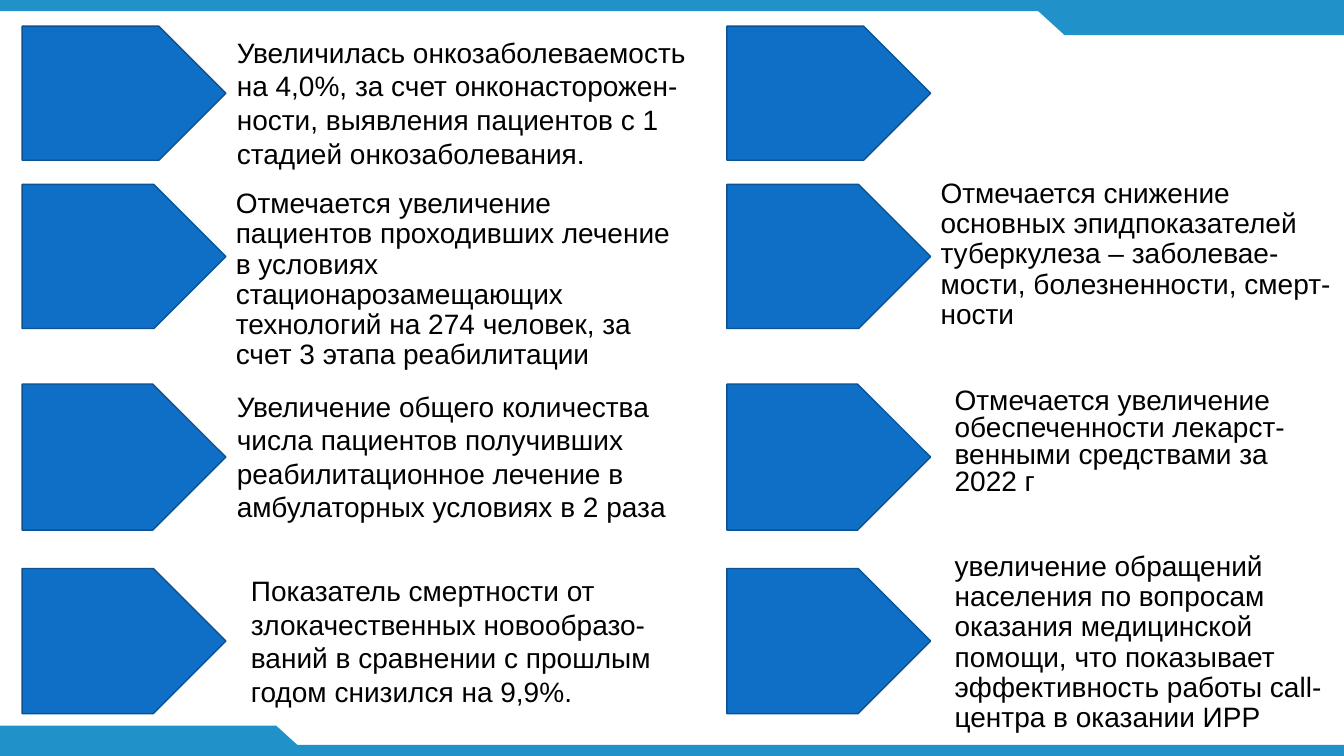
from pptx import Presentation
from pptx.dml.color import RGBColor
from pptx.enum.shapes import MSO_SHAPE as Shape
from pptx.util import Inches, Pt

BAND = RGBColor(0x21, 0x91, 0xC9)
ARROW = RGBColor(0x0F, 0x6F, 0xC6)
ARROW_EDGE = RGBColor(0x0B, 0x52, 0x92)
BLACK = RGBColor(0, 0, 0)

BANDS = [
    (Shape.RECTANGLE, 0, 0, 13.33, 0.11, 0),
    (Shape.RECTANGLE, 0, 7.39, 13.33, 0.11, 0),
    (Shape.RECTANGLE, 10.55, 0.05, 2.78, 0.3, 0),
    (Shape.FLOWCHART_MERGE, 10.22, 0.04, 0.66, 0.3, 0),
    (Shape.RECTANGLE, -0.04, 7.2, 2.78, 0.3, 0),
    (Shape.FLOWCHART_MERGE, 2.41, 7.2, 0.66, 0.3, 180),
]

ARROW_COLUMNS = [0.22, 7.21]
ARROW_WIDTH = 2.02
ARROW_ROWS = [(0.26, 1.33), (1.83, 1.43), (3.81, 1.45), (5.64, 1.44)]

RESULTS = [
    ("Увеличилась онкозаболеваемость на 4,0%, за счет онконасторожен-ности, "
     "выявления пациентов с 1 стадией онкозаболевания.", 2.25, 0.3, 4.81, 1.45, 1.0),
    ("Отмечается увеличение пациентов проходивших лечение в условиях "
     "стационарозамещающих технологий на 274 человек, за счет 3 этапа реабилитации",
     2.24, 1.83, 4.72, 1.57, 0.9),
    ("Увеличение общего количества числа пациентов получивших реабилитационное "
     "лечение в амбулаторных условиях в 2 раза", 2.25, 3.81, 4.58, 1.45, 1.0),
    ("Показатель смертности от злокачественных новообразо-ваний в сравнении с "
     "прошлым годом снизился на 9,9%.", 2.39, 5.64, 4.68, 1.45, 1.0),
    ("Отмечается снижение основных эпидпоказателей туберкулеза – заболевае-мости, "
     "болезненности, смерт-ности", 9.23, 1.73, 4.28, 1.53, 0.9),
    ("Отмечается увеличение обеспеченности лекарст-венными средствами за 2022 г",
     9.37, 3.81, 3.96, 1.17, 0.8),
    ("увеличение обращений населения по вопросам оказания медицинской помощи, что "
     "показывает эффективность работы call- центра в оказании ИРР",
     9.37, 5.43, 3.96, 1.87, 0.9),
]


def add_filled(page, kind, left, top, width, height, color):
    shape = page.shapes.add_shape(
        kind, Inches(left), Inches(top), Inches(width), Inches(height))
    shape.shadow.inherit = False
    shape.fill.solid()
    shape.fill.fore_color.rgb = color
    return shape


def add_result(page, text, left, top, width, height, spacing):
    box = page.shapes.add_textbox(
        Inches(left), Inches(top), Inches(width), Inches(height))
    box.text_frame.word_wrap = True
    para = box.text_frame.paragraphs[0]
    para.text = text
    para.line_spacing = spacing
    para.font.name = "Arial"
    para.font.size = Pt(20)
    para.font.color.rgb = BLACK


def main():
    deck = Presentation()
    deck.slide_width, deck.slide_height = Inches(13.33), Inches(7.5)
    page = deck.slides.add_slide(deck.slide_layouts[6])

    for kind, left, top, width, height, rotation in BANDS:
        band = add_filled(page, kind, left, top, width, height, BAND)
        band.line.fill.background()
        band.rotation = rotation

    for left in ARROW_COLUMNS:
        for top, height in ARROW_ROWS:
            arrow = add_filled(page, Shape.PENTAGON, left, top, ARROW_WIDTH, height, ARROW)
            arrow.line.color.rgb = ARROW_EDGE
            arrow.line.width = Pt(1)

    for result in RESULTS:
        add_result(page, *result)

    deck.save("out.pptx")


if __name__ == "__main__":
    main()
